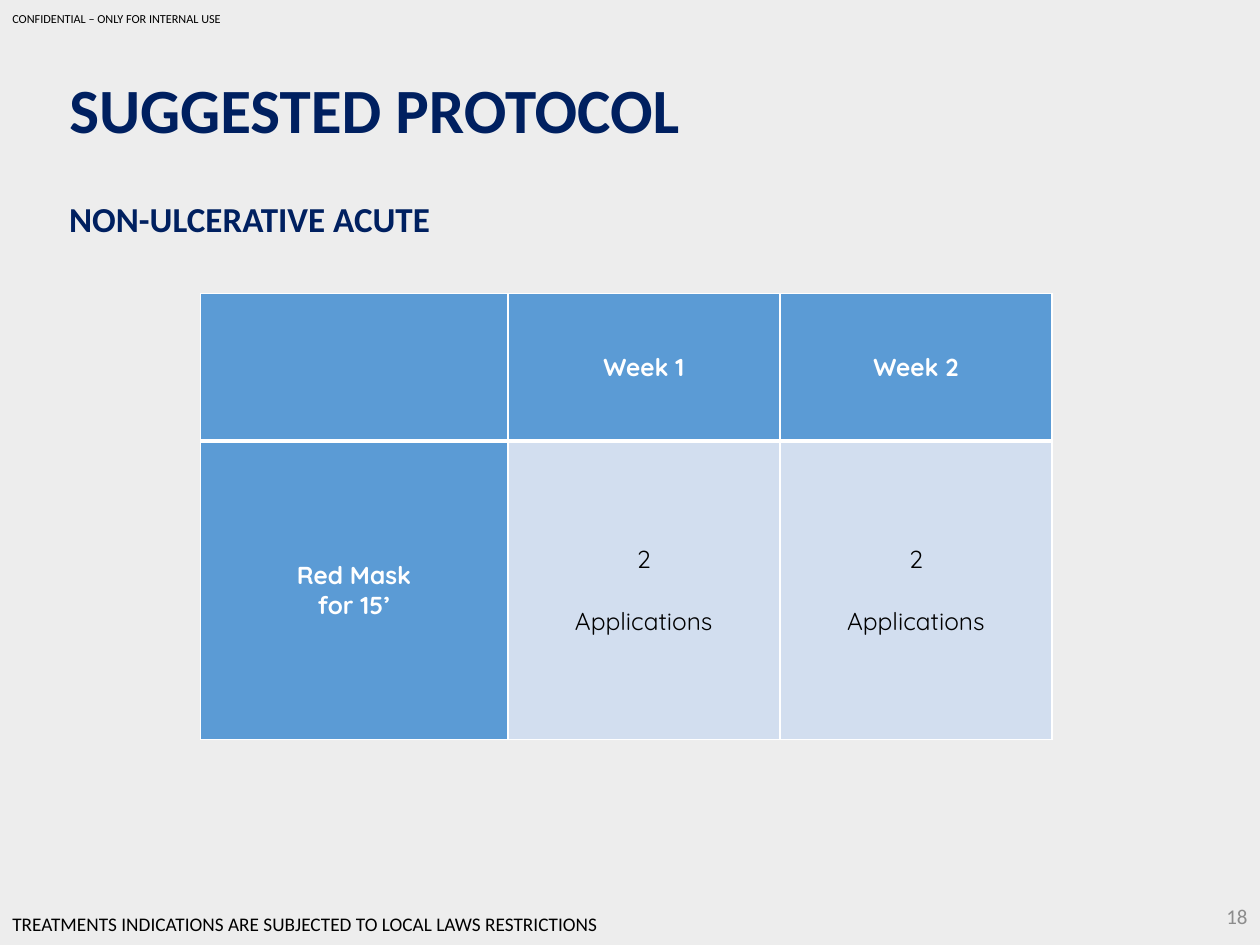
"""Build the suggested protocol slide with its treatment table."""
from dataclasses import dataclass

from lxml.etree import SubElement
from pptx import Presentation
from pptx.dml.color import RGBColor
from pptx.enum.text import MSO_ANCHOR, MSO_AUTO_SIZE, PP_ALIGN
from pptx.oxml.ns import qn
from pptx.util import Inches, Pt


@dataclass(frozen=True)
class Theme:
    """Colours, fonts and type sizes of the slide."""

    background: str = "EDEDED"
    navy: str = "002060"
    black: str = "000000"
    grey: str = "8C8C8C"
    white: str = "FFFFFF"
    header_blue: str = "5B9BD5"
    body_blue: str = "D2DEEF"
    text_font: str = "Calibri"
    table_font: str = "Quicksand"
    title_size: int = 36
    subtitle_size: int = 20
    table_size: int = 14
    number_size: int = 12
    footer_size: int = 11
    notice_size: int = 7
    thin_rule: int = 1
    thick_rule: int = 3


THEME = Theme()
MARGIN = 0.45
COLUMN_WIDTHS = (2.44, 2.16, 2.16)
ROW_HEIGHTS = (1.17, 2.37)
PROTOCOL = (
    ((), ("Week 1",), ("Week 2",)),
    (("Red Mask", "for 15’"), ("2", "Applications"), ("2", "Applications")),
)


def style_paragraph(paragraph, size, color, font, bold=False, align=PP_ALIGN.LEFT):
    """Apply one look to a whole paragraph."""
    paragraph.alignment = align
    paragraph.font.size = Pt(size)
    paragraph.font.name = font
    paragraph.font.bold = bold
    paragraph.font.color.rgb = RGBColor.from_string(color)


def write_line(shape, text, size, color, bold=False, align=PP_ALIGN.LEFT,
               anchor=MSO_ANCHOR.TOP, wrap=True):
    """Fill a shape with a single line of text."""
    frame = shape.text_frame
    frame.auto_size = MSO_AUTO_SIZE.NONE
    frame.word_wrap = wrap
    frame.vertical_anchor = anchor
    frame.text = text
    style_paragraph(frame.paragraphs[0], size, color, THEME.text_font, bold, align)


def add_title(slide, text, box):
    """Move and format the title placeholder."""
    title = slide.shapes.title
    title.left, title.top, title.width, title.height = map(Inches, box)
    write_line(title, text, THEME.title_size, THEME.navy, bold=True)


def add_label(slide, text, box, size, color, **options):
    """Add a one-line text box."""
    label = slide.shapes.add_textbox(*map(Inches, box))
    write_line(label, text, size, color, **options)


def set_border(cell, side, width):
    """Draw a white rule along one side of a cell."""
    properties = cell._tc.get_or_add_tcPr()
    line = SubElement(properties, qn(f"a:ln{side}"), w=str(Pt(width)))
    fill = SubElement(line, qn("a:solidFill"))
    SubElement(fill, qn("a:srgbClr"), val=THEME.white)


def fill_cell(cell, lines, is_top, is_heading):
    """Write, border and colour one table cell."""
    cell.vertical_anchor = MSO_ANCHOR.MIDDLE
    cell.margin_left = cell.margin_right = Inches(0.07)
    cell.margin_top = cell.margin_bottom = 0
    cell.text_frame.text = "\n".join(lines)
    text_color = THEME.white if is_heading else THEME.black
    for paragraph in cell.text_frame.paragraphs:
        style_paragraph(paragraph, THEME.table_size, text_color, THEME.table_font,
                        is_heading, PP_ALIGN.CENTER)
    if not is_heading:
        cell.text_frame.paragraphs[-1].space_before = Pt(17.5)
    top, bottom = THEME.thin_rule, THEME.thick_rule
    if not is_top:
        top, bottom = bottom, top
    for side, width in zip("LRTB", (THEME.thin_rule, THEME.thin_rule, top, bottom)):
        set_border(cell, side, width)
    cell.fill.solid()
    cell_color = THEME.header_blue if is_heading else THEME.body_blue
    cell.fill.fore_color.rgb = RGBColor.from_string(cell_color)


def add_protocol_table(slide, left, top):
    """Add the table of weekly applications."""
    size = (sum(COLUMN_WIDTHS), sum(ROW_HEIGHTS))
    table = slide.shapes.add_table(len(ROW_HEIGHTS), len(COLUMN_WIDTHS),
                                   *map(Inches, (left, top, *size))).table
    for column, width in zip(table.columns, COLUMN_WIDTHS):
        column.width = Inches(width)
    for row, height in zip(table.rows, ROW_HEIGHTS):
        row.height = Inches(height)
    for row_index, row_content in enumerate(PROTOCOL):
        for column_index, lines in enumerate(row_content):
            fill_cell(table.cell(row_index, column_index), lines,
                      row_index == 0, row_index == 0 or column_index == 0)


def main():
    """Assemble and save the slide."""
    presentation = Presentation()
    presentation.slide_width, presentation.slide_height = Inches(10), Inches(7.5)
    slide = presentation.slides.add_slide(presentation.slide_layouts[5])
    slide.background.fill.solid()
    slide.background.fill.fore_color.rgb = RGBColor.from_string(THEME.background)

    add_label(slide, "18", (9.28, 7.07, 0.72, 0.4), THEME.number_size, THEME.grey,
              align=PP_ALIGN.RIGHT, anchor=MSO_ANCHOR.MIDDLE)
    add_title(slide, "SUGGESTED PROTOCOL", (MARGIN, 0.51, 7.14, 0.71))
    add_label(slide, "CONFIDENTIAL – ONLY FOR INTERNAL USE", (0, 0.04, 1.89, 0.22),
              THEME.notice_size, THEME.black, wrap=False)
    add_protocol_table(slide, 1.59, 2.33)
    add_label(slide, "NON-ULCERATIVE ACUTE", (MARGIN, 1.52, 3.09, 0.44),
              THEME.subtitle_size, THEME.navy, bold=True, wrap=False)
    add_label(slide, "TREATMENTS INDICATIONS ARE SUBJECTED TO LOCAL LAWS RESTRICTIONS",
              (0, 7.19, 7.97, 0.29), THEME.footer_size, THEME.black)
    presentation.save("out.pptx")


if __name__ == "__main__":
    main()
